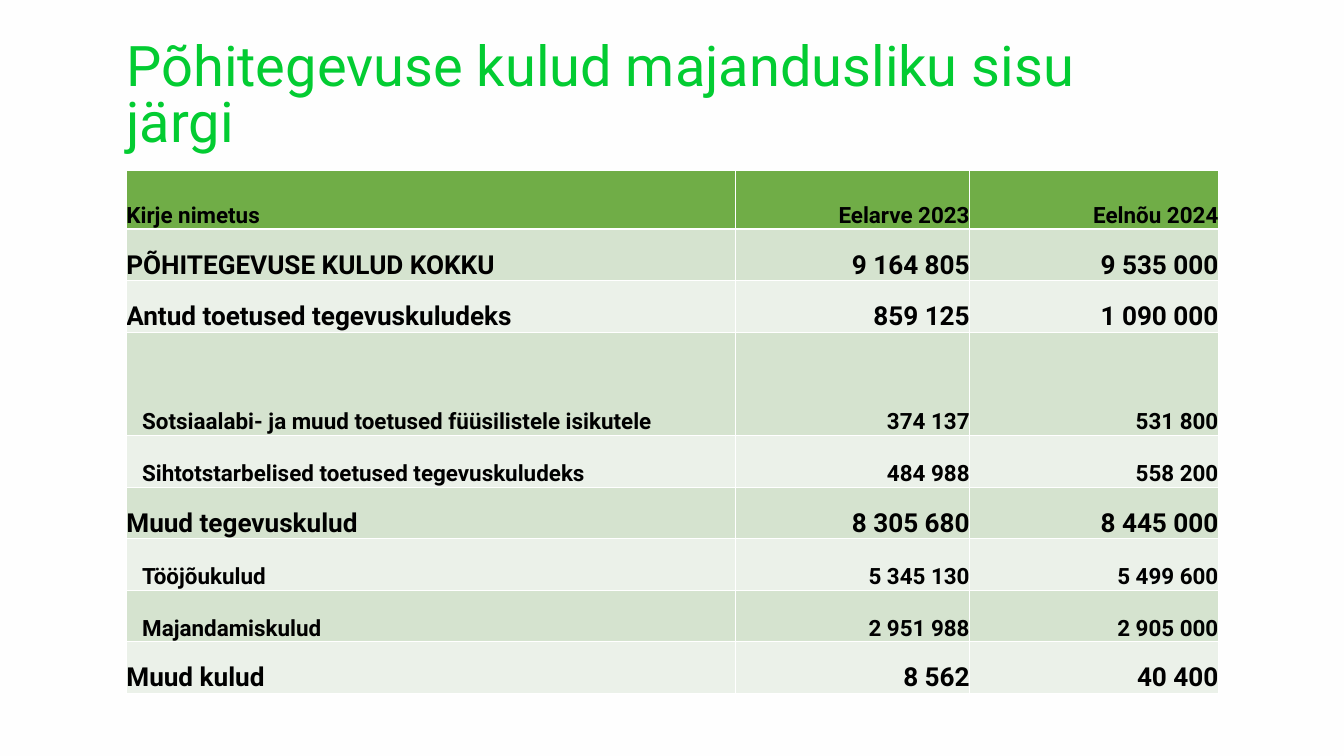
from lxml.etree import SubElement
from pptx import Presentation
from pptx.dml.color import RGBColor
from pptx.enum.text import MSO_ANCHOR, PP_ALIGN
from pptx.oxml.ns import qn
from pptx.util import Pt

TITLE = "Põhitegevuse kulud majandusliku sisu järgi"
HEAD = ("Kirje nimetus", "Eelarve 2023", "Eelnõu 2024")
ROWS = [
    ("main", "PÕHITEGEVUSE KULUD KOKKU", "9 164 805", "9 535 000"),
    ("main", "Antud toetused tegevuskuludeks", "859 125", "1 090 000"),
    ("sub", "Sotsiaalabi- ja muud toetused füüsilistele isikutele", "374 137", "531 800"),
    ("sub", "Sihtotstarbelised toetused tegevuskuludeks", "484 988", "558 200"),
    ("main", "Muud tegevuskulud", "8 305 680", "8 445 000"),
    ("sub", "Tööjõukulud", "5 345 130", "5 499 600"),
    ("sub", "Majandamiskulud", "2 951 988", "2 905 000"),
    ("main", "Muud kulud", "8 562", "40 400"),
]
WIDTHS = (653, 250.5, 266.5)
HEAD_H, ROW_H, TALL_H = 62.6, 55.3, 110.4
TALL_ROW = 3
LEFT, TOP = 135.4, 183
SIZES = {"head": 24, "main": 28, "sub": 24}
INDENT = 17

FONT = "Roboto"
PAPER = RGBColor(0xFE, 0xFE, 0xFE)
LIME = RGBColor(0x03, 0xCC, 0x32)
BLACK = RGBColor(0x00, 0x00, 0x00)
WHITE = RGBColor(0xFF, 0xFF, 0xFF)
GREEN = RGBColor(0x70, 0xAD, 0x47)
BANDS = (RGBColor(0xEB, 0xF1, 0xE9), RGBColor(0xD5, 0xE3, 0xCF))


def write(para, text, size, color, bold=False):
    run = para.add_run()
    run.text = text
    font = run.font
    font.name, font.size, font.bold = FONT, Pt(size), bold
    font.color.rgb = color


def border(cell, row):
    props = cell._tc.get_or_add_tcPr()
    widths = {"L": 1, "R": 1, "T": 3 if row == 1 else 1, "B": 3 if row == 0 else 1}
    for spot, (side, width) in enumerate(widths.items()):
        line = SubElement(props, qn(f"a:ln{side}"), w=str(Pt(width)))
        fill = SubElement(line, qn("a:solidFill"))
        SubElement(fill, qn("a:srgbClr"), val=str(WHITE))
        props.insert(spot, line)


def add_title(slide):
    frame = slide.shapes.add_textbox(Pt(LEFT), Pt(44.6), Pt(1019.5), Pt(121)).text_frame
    frame.word_wrap = True
    frame.margin_left = frame.margin_right = frame.margin_top = frame.margin_bottom = 0
    para = frame.paragraphs[0]
    para.line_spacing = Pt(60.2)
    write(para, TITLE, 60, LIME)


def add_costs(slide):
    data = [("head", *HEAD)] + ROWS
    highs = [HEAD_H] + [ROW_H] * len(ROWS)
    highs[TALL_ROW] = TALL_H
    table = slide.shapes.add_table(
        len(data), len(WIDTHS), Pt(LEFT), Pt(TOP), Pt(sum(WIDTHS)), Pt(sum(highs))
    ).table
    for col, width in zip(table.columns, WIDTHS):
        col.width = Pt(width)
    for row, (kind, *texts) in enumerate(data):
        table.rows[row].height = Pt(highs[row])
        for col, text in enumerate(texts):
            cell = table.cell(row, col)
            cell.margin_left = Pt(INDENT if kind == "sub" and col == 0 else 0)
            cell.margin_right = cell.margin_top = cell.margin_bottom = 0
            cell.vertical_anchor = MSO_ANCHOR.BOTTOM
            cell.fill.solid()
            cell.fill.fore_color.rgb = GREEN if kind == "head" else BANDS[row % 2]
            border(cell, row)
            para = cell.text_frame.paragraphs[0]
            para.alignment = PP_ALIGN.RIGHT if col else PP_ALIGN.LEFT
            write(para, text, SIZES[kind], BLACK, True)


def main():
    deck = Presentation()
    deck.slide_width, deck.slide_height = Pt(1440), Pt(810)
    slide = deck.slides.add_slide(deck.slide_layouts[6])
    back = slide.background.fill
    back.solid()
    back.fore_color.rgb = PAPER
    add_title(slide)
    add_costs(slide)
    deck.save("out.pptx")


if __name__ == "__main__":
    main()
